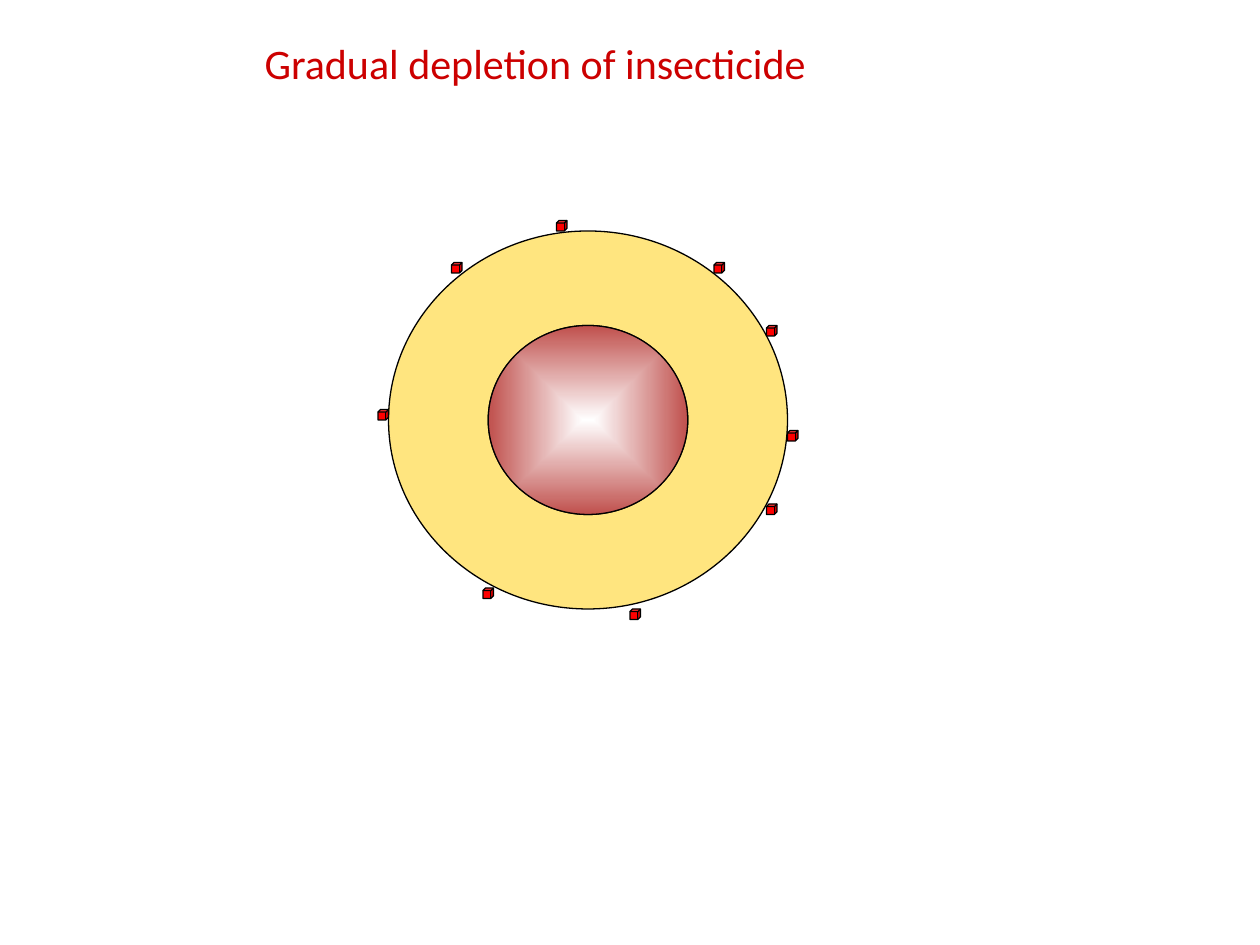
from lxml.etree import SubElement
from pptx import Presentation
from pptx.dml.color import RGBColor
from pptx.enum.shapes import MSO_SHAPE
from pptx.enum.text import MSO_ANCHOR, MSO_AUTO_SIZE, PP_ALIGN
from pptx.oxml.ns import qn
from pptx.util import Inches, Pt

HUES = {"title": "CC0000", "coat": "FFCC00", "core": "C0504D",
        "glow": "FFFFFF", "grain": "FF0000", "edge": "000000"}
COLS, ROWS = 120, 90
BEND = 0.55
MID = (56, 40)
OUTER, INNER = (19, 18), (9.5, 9)
GRAINS = [(73, 48), (75, 41), (68, 25), (73, 31), (60, 58),
          (53, 21), (46, 56), (36, 39), (43, 25)]


def assign(item, style):
    for key, value in style.items():
        setattr(item, key, value)


class Board:
    def __init__(self):
        self.deck = Presentation()
        assign(self.deck, {"slide_width": Inches(10), "slide_height": Inches(7.5)})
        self.slide = self.deck.slides.add_slide(self.deck.slide_layouts[5])
        self.shapes = self.slide.shapes

    def spot(self, col, row):
        return (round(self.deck.slide_width * col / COLS),
                round(self.deck.slide_height * row / ROWS))

    def hue(self, name):
        return RGBColor.from_string(HUES[name])

    def paint(self, shape, name):
        shape.shadow.inherit = False
        shape.fill.solid()
        shape.fill.fore_color.rgb = self.hue(name)
        shape.line.width = Pt(0.75)
        shape.line.color.rgb = self.hue("edge")

    def title(self, text, col, row, wide, high):
        box = self.shapes.title
        left, top = self.spot(col, row)
        width, height = self.spot(wide, high)
        assign(box, {"left": left, "top": top, "width": width, "height": height})
        frame = box.text_frame
        frame.text = text
        assign(frame, {"word_wrap": True, "vertical_anchor": MSO_ANCHOR.TOP,
                       "auto_size": MSO_AUTO_SIZE.SHAPE_TO_FIT_TEXT})
        line = frame.paragraphs[0]
        line.alignment = PP_ALIGN.LEFT
        font = line.runs[0].font
        assign(font, {"name": "Calibri", "size": Pt(24)})
        font.color.rgb = self.hue("title")

    def oval(self, radii, turn):
        return [self.spot(MID[0] + radii[0] * x, MID[1] + radii[1] * y)
                for x, y in ((-1, 0), (0, -turn), (1, 0), (0, turn), (-1, 0))]

    def curve(self, shape):
        mid = (shape.width / 2, shape.height / 2)
        last = None
        for step in list(shape._element.iter(qn("a:moveTo"), qn("a:lnTo"))):
            end = [int(step[0].get(key)) for key in "xy"]
            if step.tag == qn("a:lnTo"):
                arc = step.makeelement(qn("a:cubicBezTo"))
                lead = [p + BEND * (q - m) for p, q, m in zip(last, end, mid)]
                tail = [q + BEND * (p - m) for p, q, m in zip(last, end, mid)]
                for x, y in (lead, tail, end):
                    SubElement(arc, qn("a:pt"), x=str(round(x)), y=str(round(y)))
                step.getparent().replace(step, arc)
            last = end

    def ring(self, outer, inner, name, alpha):
        rim, hole = self.oval(outer, 1), self.oval(inner, -1)
        pen = self.shapes.build_freeform(*rim[0])
        pen.add_line_segments(rim[1:], close=True)
        pen.move_to(*hole[0])
        pen.add_line_segments(hole[1:], close=True)
        shape = pen.convert_to_shape()
        self.curve(shape)
        self.paint(shape, name)
        tint = shape.fill._xPr.find(qn("a:solidFill"))[0]
        SubElement(tint, qn("a:alpha"), val=str(alpha * 1000))

    def core(self, radii):
        left, top = self.spot(MID[0] - radii[0], MID[1] - radii[1])
        size = self.spot(2 * radii[0], 2 * radii[1])
        shape = self.shapes.add_shape(MSO_SHAPE.OVAL, left, top, *size)
        self.paint(shape, "core")
        shape.fill.gradient()
        for stop, name in zip(shape.fill.gradient_stops, ("glow", "core")):
            stop.color.rgb = self.hue(name)
        grad = shape.fill._xPr.find(qn("a:gradFill"))
        grad.remove(grad.find(qn("a:lin")))
        route = SubElement(grad, qn("a:path"), path="shape")
        SubElement(route, qn("a:fillToRect"), dict.fromkeys("ltrb", "50000"))

    def grains(self, spots):
        group = self.shapes.add_group_shape()
        for col, row in spots:
            cube = group.shapes.add_shape(
                MSO_SHAPE.CUBE, *self.spot(col, row), *self.spot(1, 1))
            self.paint(cube, "grain")


def main():
    board = Board()
    board.title("Gradual depletion of insecticide", 24, 3, 71, 6)
    board.ring(OUTER, INNER, "coat", 50)
    board.core(INNER)
    board.grains(GRAINS)
    board.deck.save("out.pptx")


if __name__ == "__main__":
    main()
